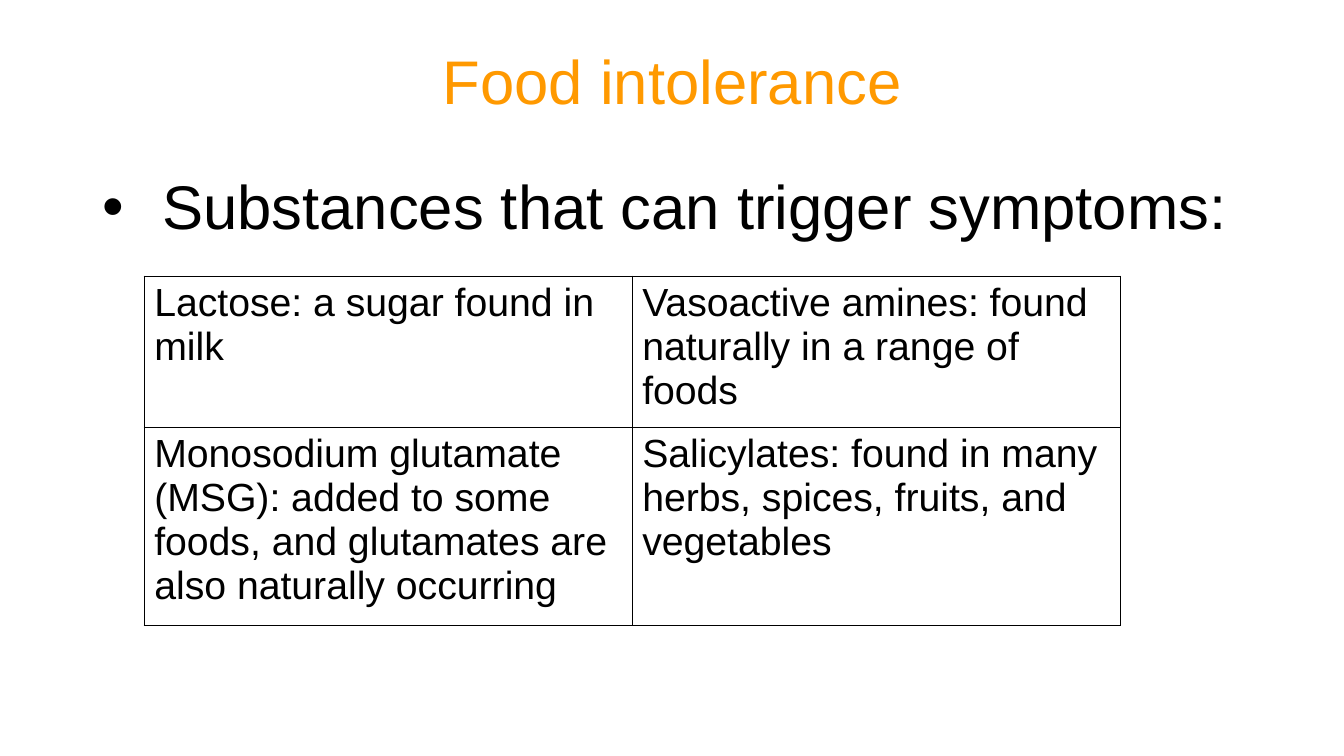
"""Build the food intolerance slide with a bullet and a table of trigger substances."""
from dataclasses import dataclass

from lxml import etree
from pptx import Presentation
from pptx import util as u
from pptx.dml.color import RGBColor
from pptx.enum import text
from pptx.oxml import ns

SLIDE_WIDTH, SLIDE_HEIGHT = u.Inches(13.33), u.Inches(7.5)


@dataclass(frozen=True)
class Theme:
    font: str = "Arial"
    accent: str = "FF9900"
    ink: str = "000000"
    heading_size: int = 44
    cell_size: int = 28
    border_width: int = 1
    bullet_indent: float = 0.59


@dataclass(frozen=True)
class Area:
    left: float
    top: float
    width: float
    height: float

    def box(self) -> tuple[int, int, int, int]:
        return (across(self.left), down(self.top), across(self.width), down(self.height))


@dataclass(frozen=True)
class TriggerRow:
    height: float
    substances: tuple[str, str]


THEME = Theme()
TITLE_AREA = Area(6.9, 1.47, 86.27, 19.33)
LEAD_AREA = Area(6.9, 22.67, 86.27, 11.6)
TRIGGER_ROWS = (
    TriggerRow(18.7, (
        "Lactose: a sugar found in milk",
        "Vasoactive amines: found naturally in a range of foods",
    )),
    TriggerRow(24.5, (
        "Monosodium glutamate (MSG): added to some foods, and glutamates are also naturally occurring",
        "Salicylates: found in many herbs, spices, fruits, and vegetables",
    )),
)
TABLE_AREA = Area(10.73, 36.53, 72.62, sum(row.height for row in TRIGGER_ROWS))


def across(percent: float) -> int:
    return round(SLIDE_WIDTH * percent / 100)


def down(percent: float) -> int:
    return round(SLIDE_HEIGHT * percent / 100)


def add_bullet(paragraph) -> None:
    properties = paragraph._p.get_or_add_pPr()
    indent = u.Inches(THEME.bullet_indent)
    properties.set("marL", str(indent))
    properties.set("indent", str(-indent))
    etree.SubElement(properties, ns.qn("a:buFont"), typeface=THEME.font)
    etree.SubElement(properties, ns.qn("a:buChar"), char="•")


def write(frame, wording: str, *, size: int, color: str = THEME.ink, spacing: float = 1.0,
          align=text.PP_ALIGN.LEFT, anchor=text.MSO_ANCHOR.TOP, bullet: bool = False) -> None:
    frame.word_wrap = True
    frame.vertical_anchor = anchor
    paragraph = frame.paragraphs[0]
    if bullet:
        add_bullet(paragraph)
    paragraph.alignment = align
    paragraph.line_spacing = spacing
    run = paragraph.add_run()
    run.text = wording
    run.font.name = THEME.font
    run.font.size = u.Pt(size)
    run.font.color.rgb = RGBColor.from_string(color)


def add_borders(cell) -> None:
    properties = cell._tc.get_or_add_tcPr()
    for position, side in enumerate(("lnL", "lnR", "lnT", "lnB")):
        border = etree.Element(ns.qn(f"a:{side}"), w=str(u.Pt(THEME.border_width)))
        fill = etree.SubElement(border, ns.qn("a:solidFill"))
        etree.SubElement(fill, ns.qn("a:srgbClr"), val=THEME.ink)
        properties.insert(position, border)


def add_title(slide) -> None:
    title = slide.shapes.title
    title.left, title.top, title.width, title.height = TITLE_AREA.box()
    title.text_frame.auto_size = text.MSO_AUTO_SIZE.NONE
    write(title.text_frame, "Food intolerance", size=THEME.heading_size, color=THEME.accent,
          spacing=0.9, align=text.PP_ALIGN.CENTER, anchor=text.MSO_ANCHOR.MIDDLE)


def add_lead(slide) -> None:
    lead = slide.shapes.add_textbox(*LEAD_AREA.box())
    write(lead.text_frame, "Substances that can trigger symptoms:", size=THEME.heading_size,
          spacing=0.9, bullet=True)


def add_triggers(slide) -> None:
    columns = len(TRIGGER_ROWS[0].substances)
    triggers = slide.shapes.add_table(len(TRIGGER_ROWS), columns, *TABLE_AREA.box()).table
    triggers.first_row = triggers.horz_banding = False
    for row_index, trigger_row in enumerate(TRIGGER_ROWS):
        triggers.rows[row_index].height = down(trigger_row.height)
        for column_index, substance in enumerate(trigger_row.substances):
            cell = triggers.cell(row_index, column_index)
            cell.fill.background()
            add_borders(cell)
            write(cell.text_frame, substance, size=THEME.cell_size)


def main() -> None:
    deck = Presentation()
    deck.slide_width, deck.slide_height = SLIDE_WIDTH, SLIDE_HEIGHT
    slide = deck.slides.add_slide(deck.slide_layouts[5])
    add_title(slide)
    add_lead(slide)
    add_triggers(slide)
    deck.save("out.pptx")


if __name__ == "__main__":
    main()
